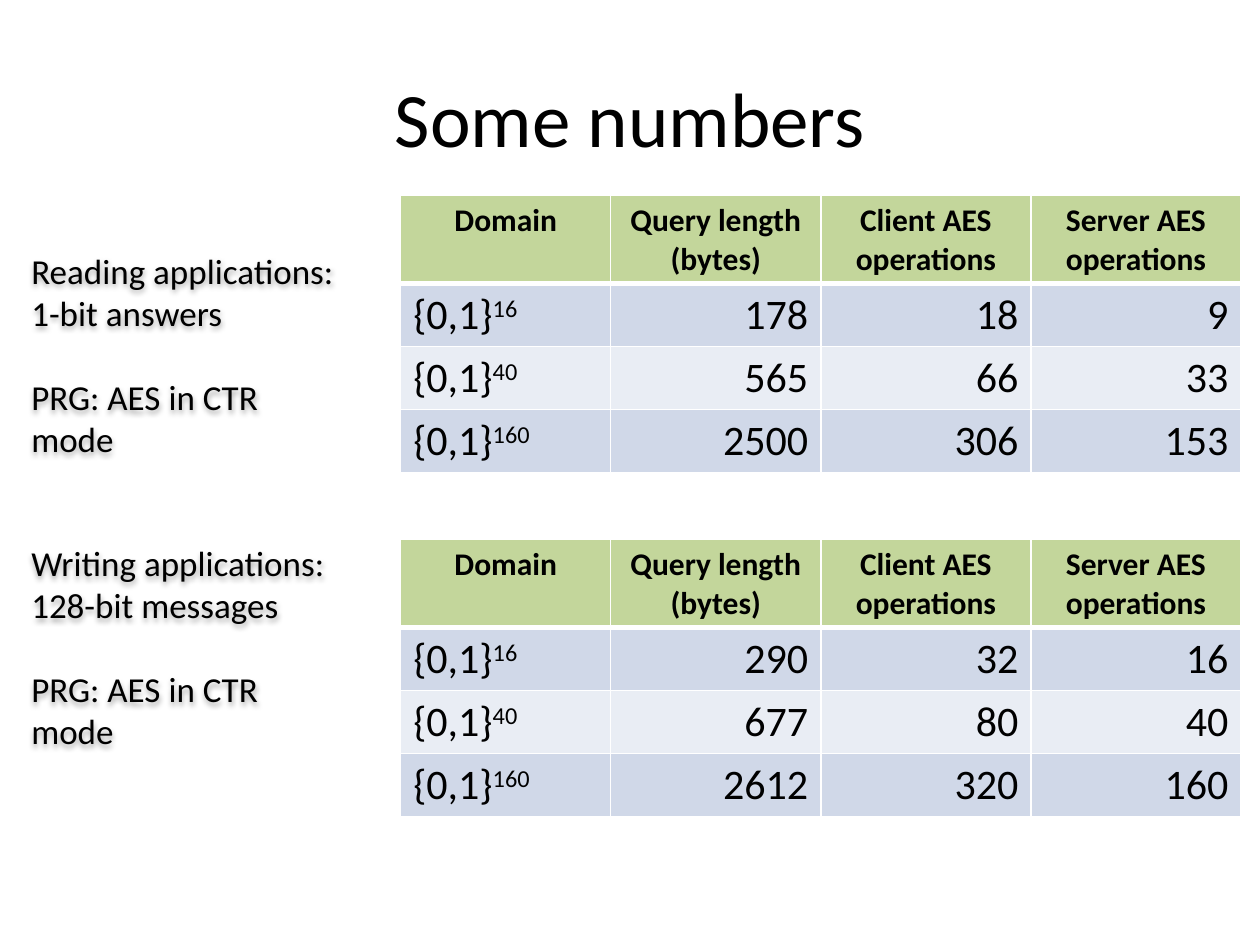
from lxml import etree
from pptx import Presentation
from pptx.dml.color import RGBColor
from pptx.enum.text import MSO_ANCHOR, PP_ALIGN
from pptx.oxml.ns import qn
from pptx.util import Inches, Pt

CENTER, LEFT, RIGHT = PP_ALIGN.CENTER, PP_ALIGN.LEFT, PP_ALIGN.RIGHT
MIDDLE = MSO_ANCHOR.MIDDLE
TITLE_ONLY = 5
FONT = "Calibri"
COLORS = {
    "text": "000000",
    "header": "C3D69B",
    "odd_row": "D0D8E8",
    "even_row": "E9EDF4",
    "border": "FFFFFF",
}
HEADERS = ["Domain", "Query length (bytes)", "Client AES operations", "Server AES operations"]
EXPONENTS = ["16", "40", "160"]
PRG_NOTE = "PRG: AES in CTR mode"
SECTIONS = [
    {
        "note": ["Reading applications:", "1-bit answers", PRG_NOTE],
        "note_top": 1.55,
        "table_top": 1.55,
        "values": [[178, 18, 9], [565, 66, 33], [2500, 306, 153]],
    },
    {
        "note": ["Writing applications:", "128-bit messages", PRG_NOTE],
        "note_top": 3.87,
        "table_top": 4.28,
        "values": [[290, 32, 16], [677, 80, 40], [2612, 320, 160]],
    },
]


def format_paragraph(paragraph, size, alignment, bold=False):
    paragraph.alignment = alignment
    font = paragraph.font
    font.name = FONT
    font.size = Pt(size)
    font.bold = bold
    font.color.rgb = RGBColor.from_string(COLORS["text"])


def add_title(slide, text):
    title = slide.shapes.title
    title.left, title.top = Inches(0.5), Inches(0.3)
    title.width, title.height = Inches(9), Inches(1.25)
    title.text_frame.text = text
    title.text_frame.vertical_anchor = MIDDLE
    format_paragraph(title.text_frame.paragraphs[0], 44, CENTER)


def add_soft_shadow(shape):
    effects = etree.SubElement(shape._element.spPr, qn("a:effectLst"))
    shadow = etree.SubElement(
        effects, qn("a:outerShdw"), blurRad="40000", dist="23000", dir="5400000", rotWithShape="0"
    )
    color = etree.SubElement(shadow, qn("a:srgbClr"), val=COLORS["text"])
    etree.SubElement(color, qn("a:alpha"), val="35000")


def add_note(slide, top, lines):
    shape = slide.shapes.add_textbox(Inches(0.15), Inches(top), Inches(2.68), Inches(2.52))
    frame = shape.text_frame
    frame.word_wrap = True
    frame.vertical_anchor = MIDDLE
    frame.text = "\n".join(lines)
    for paragraph in frame.paragraphs:
        format_paragraph(paragraph, 20, LEFT)
    frame.paragraphs[-1].space_before = Pt(24)
    add_soft_shadow(shape)


def set_borders(cell, top, bottom):
    properties = cell._tc.get_or_add_tcPr()
    for side, width in (("L", 1), ("R", 1), ("T", top), ("B", bottom)):
        line = etree.SubElement(properties, qn(f"a:ln{side}"), w=str(Pt(width)))
        fill = etree.SubElement(line, qn("a:solidFill"))
        etree.SubElement(fill, qn("a:srgbClr"), val=COLORS["border"])


def style_cell(cell, row):
    set_borders(cell, 3 if row == 1 else 1, 3 if row == 0 else 1)
    key = "header" if row == 0 else "odd_row" if row % 2 else "even_row"
    cell.fill.solid()
    cell.fill.fore_color.rgb = RGBColor.from_string(COLORS[key])


def write_domain(paragraph, exponent):
    paragraph.add_run().text = "{0,1}"
    power = paragraph.add_run()
    power.text = exponent
    power.font._element.set("baseline", "30000")


def add_cost_table(slide, top, values):
    frame = slide.shapes.add_table(
        len(values) + 1, len(HEADERS), Inches(3.18), Inches(top), Inches(6.67), Inches(2.2)
    )
    table = frame.table
    table.horz_banding = False
    for index, row in enumerate(table.rows):
        row.height = Inches(0.5 if index else 0.7)
    rows = [HEADERS] + [[power, *numbers] for power, numbers in zip(EXPONENTS, values)]
    for row, entries in enumerate(rows):
        for column, entry in enumerate(entries):
            cell = table.cell(row, column)
            style_cell(cell, row)
            paragraph = cell.text_frame.paragraphs[0]
            if row and column == 0:
                write_domain(paragraph, entry)
            else:
                paragraph.add_run().text = str(entry)
            if row == 0:
                format_paragraph(paragraph, 18, CENTER, bold=True)
            else:
                format_paragraph(paragraph, 24, RIGHT if column else LEFT)


def main():
    presentation = Presentation()
    presentation.slide_width, presentation.slide_height = Inches(10), Inches(7.5)
    slide = presentation.slides.add_slide(presentation.slide_layouts[TITLE_ONLY])
    add_title(slide, "Some numbers")
    for section in SECTIONS:
        add_note(slide, section["note_top"], section["note"])
        add_cost_table(slide, section["table_top"], section["values"])
    presentation.save("out.pptx")


if __name__ == "__main__":
    main()
